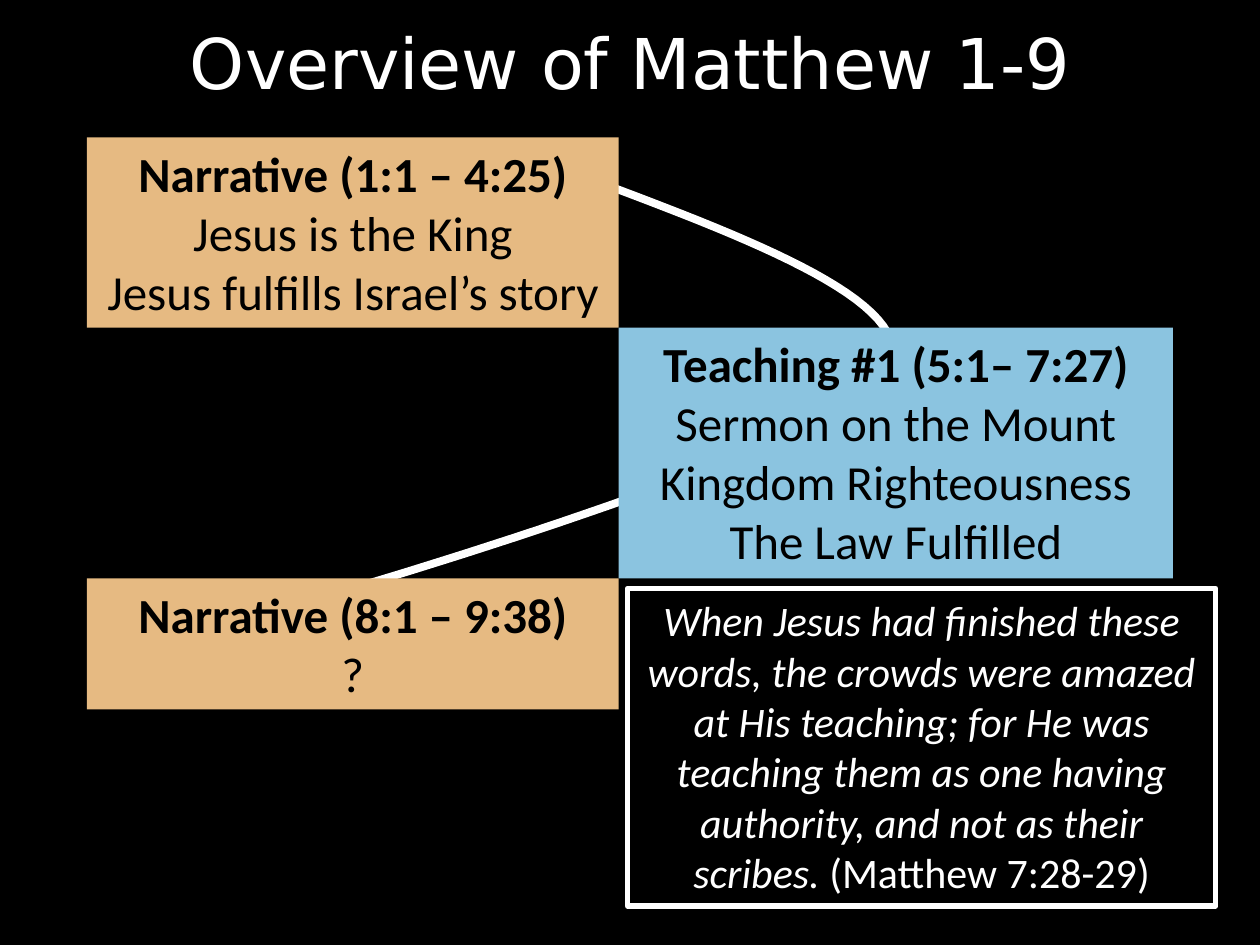
from pptx import Presentation
from pptx import util as u
from pptx.dml.color import RGBColor
from pptx.enum import shapes, text

Inches = u.Inches
COLORS = {
    "black": "000000",
    "white": "FFFFFF",
    "narrative": "E6BA82",
    "teaching": "8BC4E0",
}


def add_panel(left, top, width, height, lines, size, color):
    """Add a rectangle with one centred paragraph for each line."""
    panel = slide.shapes.add_shape(
        shapes.MSO_SHAPE.RECTANGLE,
        Inches(left), Inches(top), Inches(width), Inches(height),
    )
    panel.shadow.inherit = False
    panel.fill.background()
    panel.line.fill.background()
    frame = panel.text_frame
    frame.word_wrap = True
    frame.vertical_anchor = text.MSO_ANCHOR.TOP
    frame.text = "\n".join(lines)
    for para in frame.paragraphs:
        para.alignment = text.PP_ALIGN.CENTER
        para.font.name = "Calibri"
        para.font.size = u.Pt(size)
        para.font.color.rgb = RGBColor.from_string(COLORS[color])
    return panel


def bezier_point(points, t):
    """Return the point at t on a cubic curve, in EMU."""
    weights = ((1 - t) ** 3, 3 * t * (1 - t) ** 2, 3 * t ** 2 * (1 - t), t ** 3)
    return tuple(
        Inches(sum(weight * point[axis] for weight, point in zip(weights, points)))
        for axis in (0, 1)
    )


deck = Presentation()
deck.slide_width, deck.slide_height = Inches(10), Inches(7.5)
slide = deck.slides.add_slide(deck.slide_layouts[6])
slide.background.fill.solid()
slide.background.fill.fore_color.rgb = RGBColor.from_string(COLORS["black"])

# Curve that runs behind the panels and links them
curves = [
    [(4.63, 1.4), (5.99, 1.91), (7.35, 2.42), (7.05, 2.96)],
    [(7.05, 2.96), (6.76, 3.5), (2.86, 4.65), (2.86, 4.65)],
]
steps = 30
builder = slide.shapes.build_freeform(*bezier_point(curves[0], 0))
for curve in curves:
    builder.add_line_segments(
        [bezier_point(curve, step / steps) for step in range(1, steps + 1)],
        close=False,
    )
link = builder.convert_to_shape()
link.shadow.inherit = False
link.fill.background()
link.line.color.rgb = RGBColor.from_string(COLORS["white"])
link.line.width = u.Pt(4.5)

# Title
title = slide.shapes.add_textbox(Inches(0.69), Inches(0.14), Inches(8.62), Inches(0.78))
title.text_frame.word_wrap = True
title.text_frame.vertical_anchor = text.MSO_ANCHOR.MIDDLE
title.text_frame.text = "Overview of Matthew 1-9"
para = title.text_frame.paragraphs[0]
para.alignment = text.PP_ALIGN.CENTER
para.line_spacing = 0.9
span = para.runs[0]
span.font.name = "DejaVu Sans"
span.font.size = u.Pt(40)
span.font.color.rgb = RGBColor.from_string(COLORS["white"])

# Sections of the book: each starts where the one before it ends
sections = [
    ("narrative", 0.69, 4.22, 1.51,
     ["Narrative (1:1 – 4:25)", "Jesus is the King", "Jesus fulfills Israel’s story"]),
    ("teaching", 4.91, 4.4, 1.99,
     ["Teaching #1 (5:1– 7:27)", "Sermon on the Mount", "Kingdom Righteousness",
      "The Law Fulfilled"]),
    ("narrative", 0.69, 4.22, 1.04, ["Narrative (8:1 – 9:38)", "?"]),
]
top = 1.09
for kind, left, width, height, lines in sections:
    section = add_panel(left, top, width, height, lines, 28, "black")
    section.fill.solid()
    section.fill.fore_color.rgb = RGBColor.from_string(COLORS[kind])
    section.text_frame.paragraphs[0].runs[0].font.bold = True
    top += height

# Quotation
quote = (
    "When Jesus had finished these words, the crowds were amazed at His teaching; "
    "for He was teaching them as one having authority, and not as their scribes. "
)
quotation = add_panel(4.98, 4.67, 4.67, 2.52, [quote], 24, "white")
quotation.line.color.rgb = RGBColor.from_string(COLORS["white"])
quotation.line.width = u.Pt(3)
para = quotation.text_frame.paragraphs[0]
para.runs[0].font.italic = True
para.add_run().text = "(Matthew 7:28-29)"

deck.save("out.pptx")
